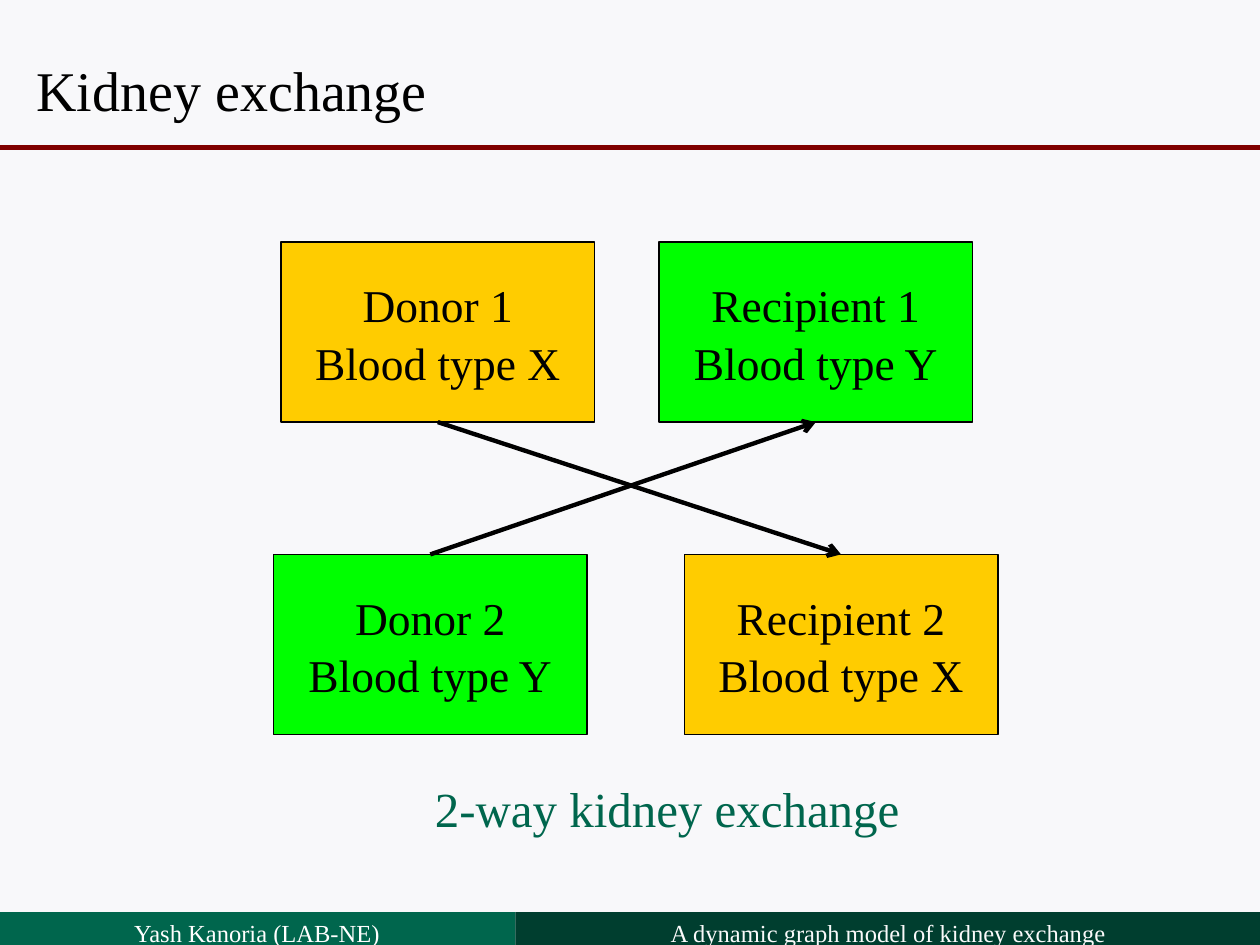
from lxml import etree
from pptx import Presentation
from pptx.dml.color import RGBColor
from pptx.enum.shapes import MSO_CONNECTOR as Connector, MSO_SHAPE as Shape
from pptx.enum.text import MSO_ANCHOR as Anchor, PP_ALIGN as Align
from pptx.oxml.ns import qn
from pptx.util import Inches, Pt

COLORS = {
    "background": "F8F8FA", "black": "000000", "white": "FFFFFF", "off_white": "FAFAFA",
    "rule": "800000", "green": "00664D", "dark_green": "003E2F",
    "type_x": "FFCC00", "type_y": "00FF00",
}
FONT = "Times New Roman"
BOTTOM, TOP = 2, 0


def write(shape, lines, size, color, align=Align.CENTER, spacing=1.0):
    frame = shape.text_frame
    for index, line in enumerate(lines):
        paragraph = frame.paragraphs[0] if index == 0 else frame.add_paragraph()
        paragraph.alignment = align
        paragraph.line_spacing = spacing
        run = paragraph.add_run()
        run.text = line
        run.font.name = FONT
        run.font.size = Pt(size)
        run.font.color.rgb = RGBColor.from_string(COLORS[color])


def add_line(start, end, color, width):
    line = slide.shapes.add_connector(Connector.STRAIGHT, *start, *end)
    line.line.color.rgb = RGBColor.from_string(COLORS[color])
    line.line.width = Pt(width)
    etree.SubElement(line._element.spPr, qn("a:effectLst"))
    return line


presentation = Presentation()
presentation.slide_width, presentation.slide_height = Inches(10), Inches(7.5)
slide = presentation.slides.add_slide(presentation.slide_layouts[5])
slide.background.fill.solid()
slide.background.fill.fore_color.rgb = RGBColor.from_string(COLORS["background"])

# Title and rule
title = slide.shapes.title
title.left, title.top, title.width, title.height = map(Inches, (0.19, 0.42, 9.4, 0.58))
title.text_frame.vertical_anchor = Anchor.MIDDLE
write(title, ["Kidney exchange"], 32, "black", Align.LEFT)
rule_top = Inches(1.17)
add_line((0, rule_top), (presentation.slide_width, rule_top), "rule", 3)

# Footer
footers = [
    (-0.01, 4.1, "green", "white", "Yash Kanoria (LAB-NE)"),
    (4.09, 5.92, "dark_green", "off_white", "A dynamic graph model of kidney exchange"),
]
for left, width, fill, color, text in footers:
    footer = slide.shapes.add_shape(
        Shape.RECTANGLE, Inches(left), Inches(7.24), Inches(width), Inches(0.34))
    footer.shadow.inherit = False
    footer.fill.solid()
    footer.fill.fore_color.rgb = RGBColor.from_string(COLORS[fill])
    footer.line.fill.background()
    footer.text_frame.vertical_anchor = Anchor.TOP
    write(footer, [text], 14, color)

# Donors on the left, recipients on the right, one pair per row
row_tops = {1: 1.92, 2: 4.4}
people = [
    ("Donor", 1, 2.23, "X"), ("Recipient", 1, 5.23, "Y"),
    ("Donor", 2, 2.17, "Y"), ("Recipient", 2, 5.43, "X"),
]
boxes = {}
for role, pair, left, blood in people:
    box = slide.shapes.add_shape(
        Shape.RECTANGLE, Inches(left), Inches(row_tops[pair]), Inches(2.49), Inches(1.43))
    box.shadow.inherit = False
    box.fill.solid()
    box.fill.fore_color.rgb = RGBColor.from_string(COLORS[f"type_{blood.lower()}"])
    box.line.color.rgb = RGBColor.from_string(COLORS["black"])
    box.line.width = Pt(0.75)
    box.text_frame.word_wrap = False
    box.text_frame.vertical_anchor = Anchor.MIDDLE
    write(box, [f"{role} {pair}", f"Blood type {blood}"], 26, "black", spacing=1.05)
    boxes[role, pair] = box

# Each donor gives to the other pair's recipient
for donor, recipient, start_side, end_side in [(1, 2, BOTTOM, TOP), (2, 1, TOP, BOTTOM)]:
    arrow = add_line((0, 0), (0, 0), "black", 2.5)
    arrow.begin_connect(boxes["Donor", donor], start_side)
    arrow.end_connect(boxes["Recipient", recipient], end_side)
    etree.SubElement(arrow.line._get_or_add_ln(), qn("a:tailEnd"), type="arrow")

caption = slide.shapes.add_textbox(Inches(2.17), Inches(6.13), Inches(6.25), Inches(0.57))
caption.text_frame.word_wrap = True
write(caption, ["2-way kidney exchange"], 28, "green")

presentation.save("out.pptx")
